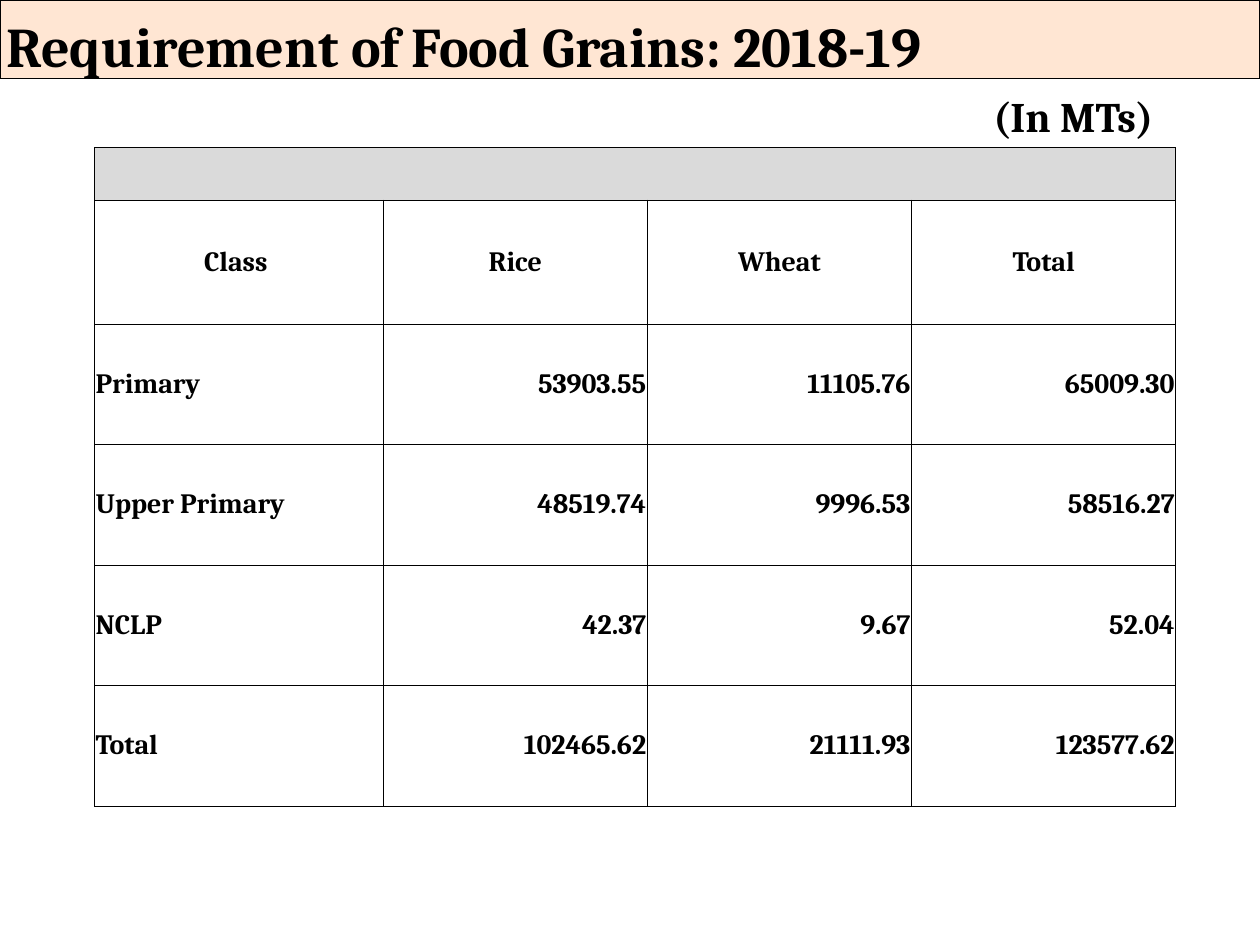
import pptx
import pptx.util
import pptx.dml.color
import pptx.enum.shapes
import pptx.enum.text
import pptx.oxml.ns
from lxml import etree

Pt = pptx.util.Pt
Align = pptx.enum.text.PP_ALIGN
Anchor = pptx.enum.text.MSO_ANCHOR
COLORS = {"ink": "000000", "peach": "FFE6D3", "gray": "DADADA"}
ROWS = [
    ("Class ", "Rice", "Wheat", "Total"),
    ("Primary", "53903.55", "11105.76", "65009.30"),
    ("Upper Primary", "48519.74", "9996.53", "58516.27"),
    ("NCLP", "42.37", "9.67", "52.04"),
    ("Total", "102465.62", "21111.93", "123577.62"),
]


def color(name):
    return pptx.dml.color.RGBColor.from_string(COLORS[name])


def write(frame, text, size=16, align=Align.LEFT):
    para = frame.paragraphs[0]
    para.alignment = align
    run = para.add_run()
    run.text = text
    run.font.name = "Cambria"
    run.font.size = Pt(size)
    run.font.bold = True
    run.font.color.rgb = color("ink")


def label(shapes, box, text, size, anchor=Anchor.TOP):
    frame = shapes.add_textbox(*map(Pt, box)).text_frame
    frame.word_wrap = True
    frame.vertical_anchor = anchor
    frame.margin_left = frame.margin_right = Pt(3.6)
    frame.margin_top = frame.margin_bottom = Pt(3.6)
    write(frame, text, size=size)


def banner(slide, box):
    left, top, width, height = box
    group = slide.shapes.add_group_shape()
    bar = group.shapes.add_shape(
        pptx.enum.shapes.MSO_SHAPE.RECTANGLE, *map(Pt, box))
    bar.shadow.inherit = False
    bar.fill.solid()
    bar.fill.fore_color.rgb = color("peach")
    bar.line.color.rgb = color("ink")
    bar.line.width = Pt(0.75)
    label(group.shapes, (left, top + 2.2, width, height + 1.4),
          "Requirement of Food Grains: 2018-19", 32, Anchor.BOTTOM)


def border(cell):
    props = cell._tc.get_or_add_tcPr()
    qn = pptx.oxml.ns.qn
    for side in ("lnL", "lnR", "lnT", "lnB"):
        line = etree.SubElement(props, qn("a:" + side), w=str(Pt(0.5)))
        fill = etree.SubElement(line, qn("a:solidFill"))
        etree.SubElement(fill, qn("a:srgbClr"), val=COLORS["ink"])


def grid(slide, box):
    left, top, width, height = box
    count = len(ROWS[0])
    table = slide.shapes.add_table(
        len(ROWS) + 1, count, *map(Pt, box)).table
    table.first_row = table.horz_banding = False
    first = 165
    rest = (width - first) / (count - 1)
    for col, size in zip(table.columns, [first] + [rest] * (count - 1)):
        col.width = Pt(size)
    tops = [30, 70.9]
    each = (height - sum(tops)) / (len(ROWS) - 1)
    for row, size in zip(table.rows, tops + [each] * (len(ROWS) - 1)):
        row.height = Pt(size)

    for cell in table.iter_cells():
        border(cell)
        cell.fill.background()
        cell.vertical_anchor = Anchor.MIDDLE
        cell.margin_left = cell.margin_right = Pt(0.7)
        cell.margin_top = cell.margin_bottom = Pt(0.7)

    head = table.cell(0, 0)
    head.merge(table.cell(0, count - 1))
    head.fill.solid()
    head.fill.fore_color.rgb = color("gray")

    for r, row in enumerate(ROWS, 1):
        for c, text in enumerate(row):
            align = Align.LEFT if c == 0 else Align.RIGHT
            if r == 1:
                align = Align.CENTER
            write(table.cell(r, c).text_frame, text, align=align)


def main():
    deck = pptx.Presentation()
    deck.slide_width, deck.slide_height = Pt(720), Pt(540)
    slide = deck.slides.add_slide(deck.slide_layouts[6])
    banner(slide, (0, 0, 720, 44.7))
    label(slide.shapes, (564, 48, 120, 33), "(In MTs)", 24)
    grid(slide, (54, 84.3, 618, 376.4))
    deck.save("out.pptx")


if __name__ == "__main__":
    main()
